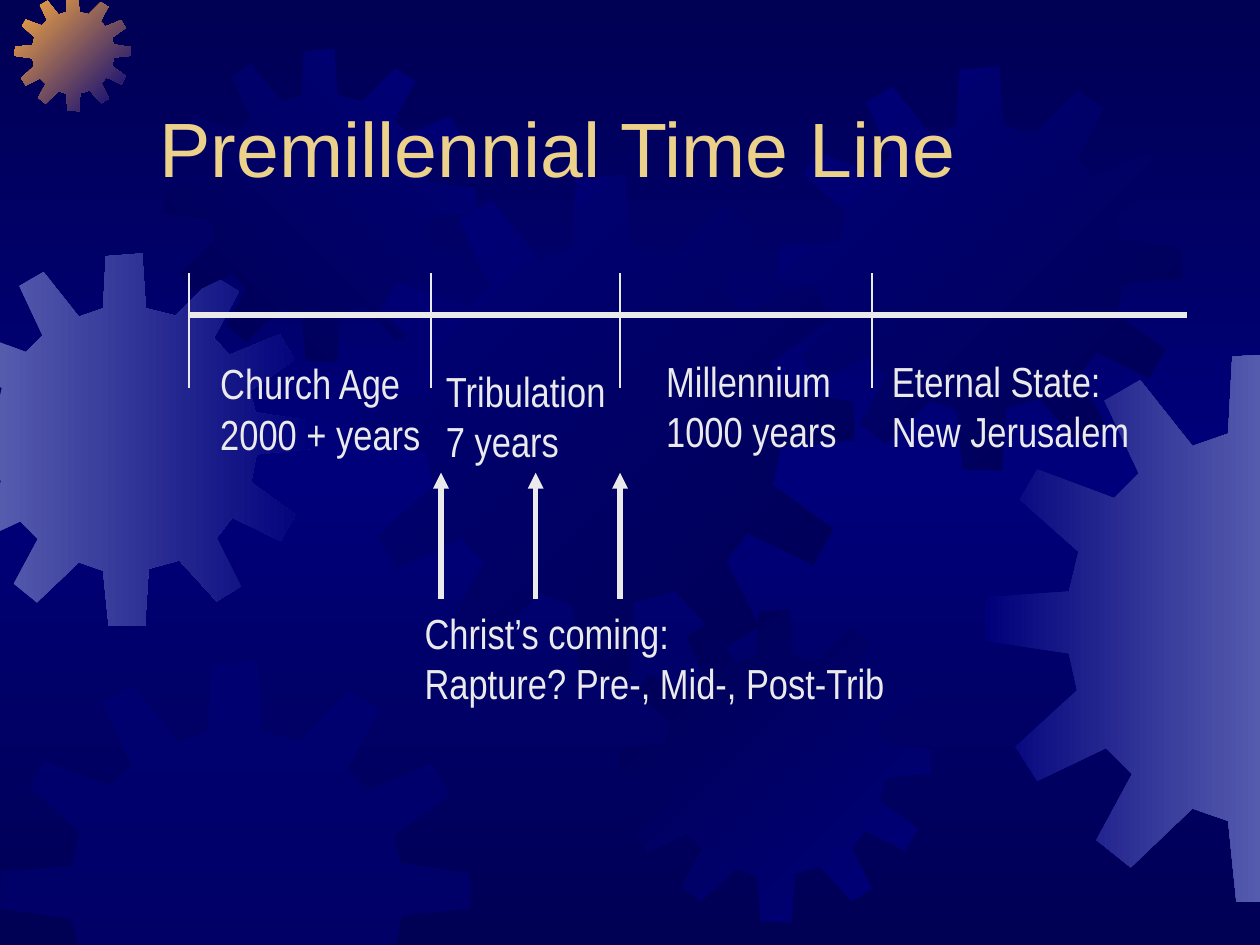
"""Build the Premillennial Time Line slide."""
from lxml import etree
from pptx import Presentation
from pptx import util as u
from pptx.dml import color
from pptx.enum import shapes, text
from pptx.oxml import ns

WIDTH, HEIGHT = 25.4, 19.05
NAVY, BLUE, LILAC, ORANGE = "000054", "00007A", "555BAD", "FCAB40"
PALE, GOLD = "EAEAEA", "EBD189"

GEAR_SPAN = 401
GEAR_OUTLINE = [
    (255, 67), (223, 59), (219, 0), (180, 3), (177, 59), (151, 68), (113, 20), (87, 35),
    (112, 88), (94, 106), (38, 85), (25, 107), (68, 145), (61, 174), (1, 178), (0, 210),
    (61, 219), (67, 246), (22, 287), (38, 312), (88, 288), (107, 307), (81, 355), (106, 375),
    (151, 332), (177, 341), (183, 400), (222, 401), (226, 339), (259, 330), (299, 374), (325, 358),
    (299, 306), (316, 284), (368, 309), (384, 281), (336, 246), (342, 216), (401, 210), (400, 180),
    (341, 171), (335, 148), (383, 114), (367, 87), (313, 109), (296, 91), (323, 41), (297, 25),
]
# left, top, size, colours, clockwise angle
GEARS = [
    (-1.24, 5.11, 7.52, [LILAC, BLUE], 0),
    (0.3, -0.1, 2.34, [ORANGE, BLUE], 45),
    (3.3, 0.99, 6.3, [NAVY, BLUE], 315),
    (7.04, 3.53, 10.19, [BLUE, NAVY], 45),
    (0, 13.34, 9.5, [BLUE], 0),
    (12.47, 12.29, 6.3, [NAVY, BLUE], 45),
    (15.7, 1.35, 8.13, [BLUE, NAVY], 45),
    (19.86, 7.11, 11.1, [BLUE, LILAC], 0),
]
TITLE = ("Premillennial Time Line", (2.97, 0.84, 21.59, 3.18))
LABELS = [
    (["Church Age", "2000 + years"], (4.19, 7.09, 4.57, 2.29)),
    (["Tribulation", "7 years"], (8.74, 7.24, 3.76, 2.29)),
    (["Millennium", "1000 years"], (13.18, 7.04, 3.96, 2.29)),
    (["Eternal State:", "New Jerusalem"], (17.73, 7.04, 5.31, 2.29)),
    (["Christ’s coming:", "Rapture? Pre-, Mid-, Post-Trib"], (8.31, 12.12, 9.83, 2.29)),
]
AXIS = (3.81, 6.35, 23.93, 6.35)
DIVIDERS, DIVIDER_TOP, DIVIDER_END = [3.81, 8.69, 12.5, 17.58], 5.51, 7.82
ARROWS, ARROW_START, ARROW_TIP = [8.89, 10.8, 12.5], 12.07, 9.53

TITLE_FONT = {"name": "Arial", "size": u.Pt(44)}
LABEL_FONT = {"name": "Arial Narrow", "size": u.Pt(24)}
TITLE_FRAME = {"word_wrap": True, "vertical_anchor": text.MSO_ANCHOR.BOTTOM}
LABEL_FRAME = {"word_wrap": False, "auto_size": text.MSO_AUTO_SIZE.SHAPE_TO_FIT_TEXT}


def hue(value):
    return color.RGBColor.from_string(value)


def apply(target, values):
    for name, value in values.items():
        setattr(target, name, value)


def add_node(parent, tag, **attributes):
    return etree.SubElement(parent, ns.qn(tag), attributes)


def paint_gradient(owner, fill, colours, angle):
    fill.gradient()
    fill.gradient_angle = (360 - angle) % 360
    stops = owner.element.find(".//" + ns.qn("a:gsLst"))
    for stop in list(stops):
        stops.remove(stop)
    for index, colour in enumerate(colours):
        place = str(100000 * index // (len(colours) - 1))
        add_node(add_node(stops, "a:gs", pos=place), "a:srgbClr", val=colour)


def clip(points, axis, limit, sign):
    kept = []
    for start, end in zip(points[-1:] + points[:-1], points):
        before, after = (sign * (point[axis] - limit) for point in (start, end))
        if before * after < 0:
            share = before / (before - after)
            kept.append(tuple(a + share * (b - a) for a, b in zip(start, end)))
        if after >= 0:
            kept.append(end)
    return kept


def add_gear(page, left, top, size, colours, angle):
    scale = size / GEAR_SPAN
    points = [(left + x * scale, top + y * scale) for x, y in GEAR_OUTLINE]
    for edge in [(0, 0, 1), (0, WIDTH, -1), (1, 0, 1), (1, HEIGHT, -1)]:
        points = clip(points, *edge)
    points = [(u.Cm(x), u.Cm(y)) for x, y in points]
    builder = page.shapes.build_freeform(*points[0])
    builder.add_line_segments(points[1:], close=True)
    gear = builder.convert_to_shape()
    gear.shadow.inherit = False
    gear.line.fill.background()
    if len(colours) > 1:
        paint_gradient(gear, gear.fill, colours, angle)
    else:
        gear.fill.solid()
        gear.fill.fore_color.rgb = hue(colours[0])
        solid = gear.element.spPr.find(ns.qn("a:solidFill"))
        add_node(solid[0], "a:alpha", val="50000")


def add_line(page, ends, weight, arrow=False):
    line = page.shapes.add_connector(shapes.MSO_CONNECTOR.STRAIGHT, *map(u.Cm, ends))
    line.line.color.rgb = hue(PALE)
    line.line.width = u.Pt(weight)
    properties = line.element.spPr
    if arrow:
        add_node(properties.find(ns.qn("a:ln")), "a:tailEnd", type="triangle")
    add_node(properties, "a:effectLst")


def add_text(page, lines, place, font, colour, frame):
    box = page.shapes.add_textbox(*map(u.Cm, place))
    apply(box.text_frame, frame)
    for index, line in enumerate(lines):
        para = box.text_frame.add_paragraph() if index else box.text_frame.paragraphs[0]
        span = para.add_run()
        span.text = line
        apply(span.font, font)
        span.font.color.rgb = hue(colour)


def main():
    deck = Presentation()
    deck.slide_width, deck.slide_height = u.Cm(WIDTH), u.Cm(HEIGHT)
    page = deck.slides.add_slide(deck.slide_layouts[6])
    paint_gradient(page, page.background.fill, [NAVY, BLUE, NAVY], 90)
    for gear in GEARS:
        add_gear(page, *gear)
    add_text(page, [TITLE[0]], TITLE[1], TITLE_FONT, GOLD, TITLE_FRAME)
    add_line(page, AXIS, 3)
    for x in DIVIDERS:
        add_line(page, (x, DIVIDER_TOP, x, DIVIDER_END), 0.75)
    for lines, place in LABELS:
        add_text(page, lines, place, LABEL_FONT, PALE, LABEL_FRAME)
    for x in ARROWS:
        add_line(page, (x, ARROW_START, x, ARROW_TIP), 3, arrow=True)
    deck.save("out.pptx")


if __name__ == "__main__":
    main()
